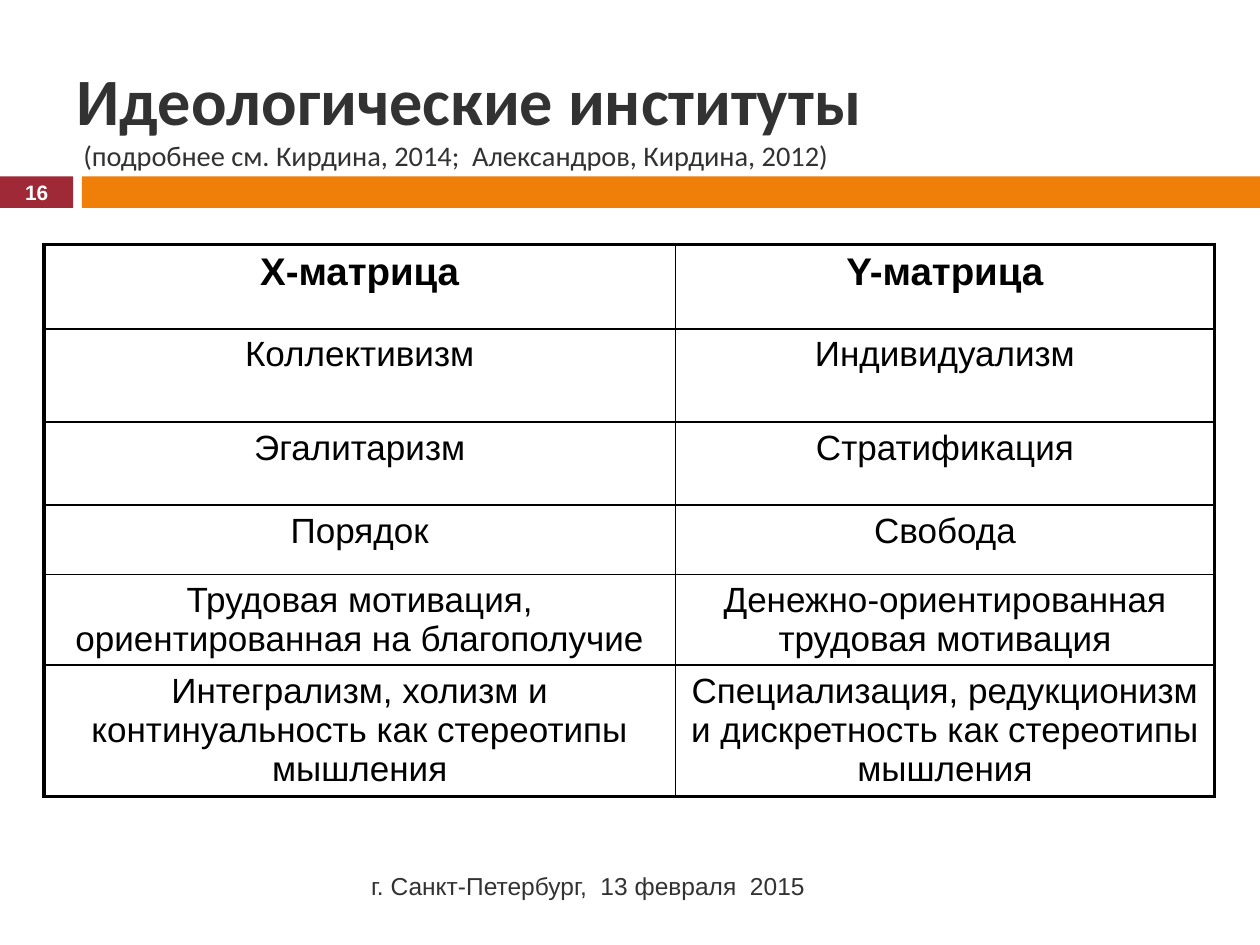
from lxml.etree import SubElement
from pptx import Presentation
from pptx.dml.color import RGBColor
from pptx.enum.shapes import MSO_SHAPE
from pptx.enum.text import MSO_ANCHOR, MSO_AUTO_SIZE, PP_ALIGN
from pptx.oxml import parse_xml
from pptx.oxml.ns import nsdecls, qn
from pptx.util import Inches, Pt

RED = RGBColor(0x9F, 0x29, 0x36)
ORANGE = RGBColor(0xF0, 0x7F, 0x09)
DARK = RGBColor(0x32, 0x32, 0x32)
BLACK = RGBColor(0, 0, 0)
WHITE = RGBColor(0xFF, 0xFF, 0xFF)

ROWS = [
    ("Х-матрица", "Y-матрица"),
    ("Коллективизм", "Индивидуализм"),
    ("Эгалитаризм", "Стратификация"),
    ("Порядок", "Свобода"),
    ("Трудовая мотивация, ориентированная на благополучие",
     "Денежно-ориентированная трудовая мотивация"),
    ("Интегрализм, холизм и континуальность как стереотипы мышления",
     "Специализация, редукционизм и дискретность как стереотипы мышления"),
]
COL_WIDTHS = [5.01, 4.28]
ROW_HEIGHTS = [0.67, 0.74, 0.66, 0.55, 0.72, 1.04]
THICK, THIN = Pt(2.25), Pt(1)


def format_runs(p, size, color, bold=False, font="Arial"):
    for r in p.runs:
        r.font.name = font
        r.font.size = Pt(size)
        r.font.bold = bold
        r.font.color.rgb = color


def set_borders(cell, widths):
    """Draw black borders; widths run left, right, top, bottom."""
    tc_pr = cell._tc.get_or_add_tcPr()
    for i, (side, width) in enumerate(zip("LRTB", widths)):
        ln = parse_xml(f'<a:ln{side} {nsdecls("a")} w="{width}"/>')
        fill = SubElement(ln, qn("a:solidFill"))
        SubElement(fill, qn("a:srgbClr"), val=str(BLACK))
        tc_pr.insert(i, ln)


prs = Presentation()
prs.slide_width, prs.slide_height = Inches(10), Inches(7.5)
s = prs.slides.add_slide(prs.slide_layouts[5])

# Band under the title
for left, width, color in [(0, 0.58, RED), (0.65, 9.35, ORANGE)]:
    sp = s.shapes.add_shape(MSO_SHAPE.RECTANGLE, Inches(left), Inches(1.4),
                            Inches(width), Inches(0.25))
    sp.shadow.inherit = False
    sp.fill.solid()
    sp.fill.fore_color.rgb = color
    sp.line.fill.background()

# Title
title = s.shapes.title
title.left, title.top = Inches(0.51), Inches(0.44)
title.width, title.height = Inches(9.17), Inches(0.96)
tf = title.text_frame
tf.text = ("Идеологические институты\v"
           " (подробнее см. Кирдина, 2014;  Александров, Кирдина, 2012)")
tf.auto_size = MSO_AUTO_SIZE.NONE
tf.vertical_anchor = MSO_ANCHOR.MIDDLE
p = tf.paragraphs[0]
p.alignment = PP_ALIGN.LEFT
format_runs(p, 16.2, DARK, font="Calibri")
p.runs[0].font.size = Pt(37.8)
p.runs[0].font.bold = True

# Comparison table
table = s.shapes.add_table(len(ROWS), len(COL_WIDTHS), Inches(0.35), Inches(1.94),
                           Inches(sum(COL_WIDTHS)), Inches(sum(ROW_HEIGHTS))).table
for column, width in zip(table.columns, COL_WIDTHS):
    column.width = Inches(width)
for i, (row, height) in enumerate(zip(ROWS, ROW_HEIGHTS)):
    table.rows[i].height = Inches(height)
    for j, text in enumerate(row):
        cell = table.cell(i, j)
        cell.text = text
        cell.fill.background()
        p = cell.text_frame.paragraphs[0]
        p.alignment = PP_ALIGN.CENTER
        format_runs(p, 22 if i == 0 else 20, BLACK, bold=i == 0)
        outer = (j == 0, j == len(row) - 1, i == 0, i == len(ROWS) - 1)
        set_borders(cell, [THICK if edge else THIN for edge in outer])

# Footer and slide number
for text, box, align, margin, size, color, bold in [
    ("г. Санкт-Петербург,  13 февраля  2015", (0.67, 6.83, 5.93, 0.4),
     PP_ALIGN.RIGHT, 0.21, 14, DARK, False),
    ("16", (0, 1.39, 0.58, 0.27), PP_ALIGN.CENTER, 0, 11.9, WHITE, True),
]:
    tf = s.shapes.add_textbox(*map(Inches, box)).text_frame
    tf.text = text
    tf.word_wrap = True
    tf.vertical_anchor = MSO_ANCHOR.MIDDLE
    tf.margin_left = tf.margin_right = Inches(margin)
    tf.margin_top = tf.margin_bottom = 0
    tf.paragraphs[0].alignment = align
    format_runs(tf.paragraphs[0], size, color, bold)

prs.save("out.pptx")
